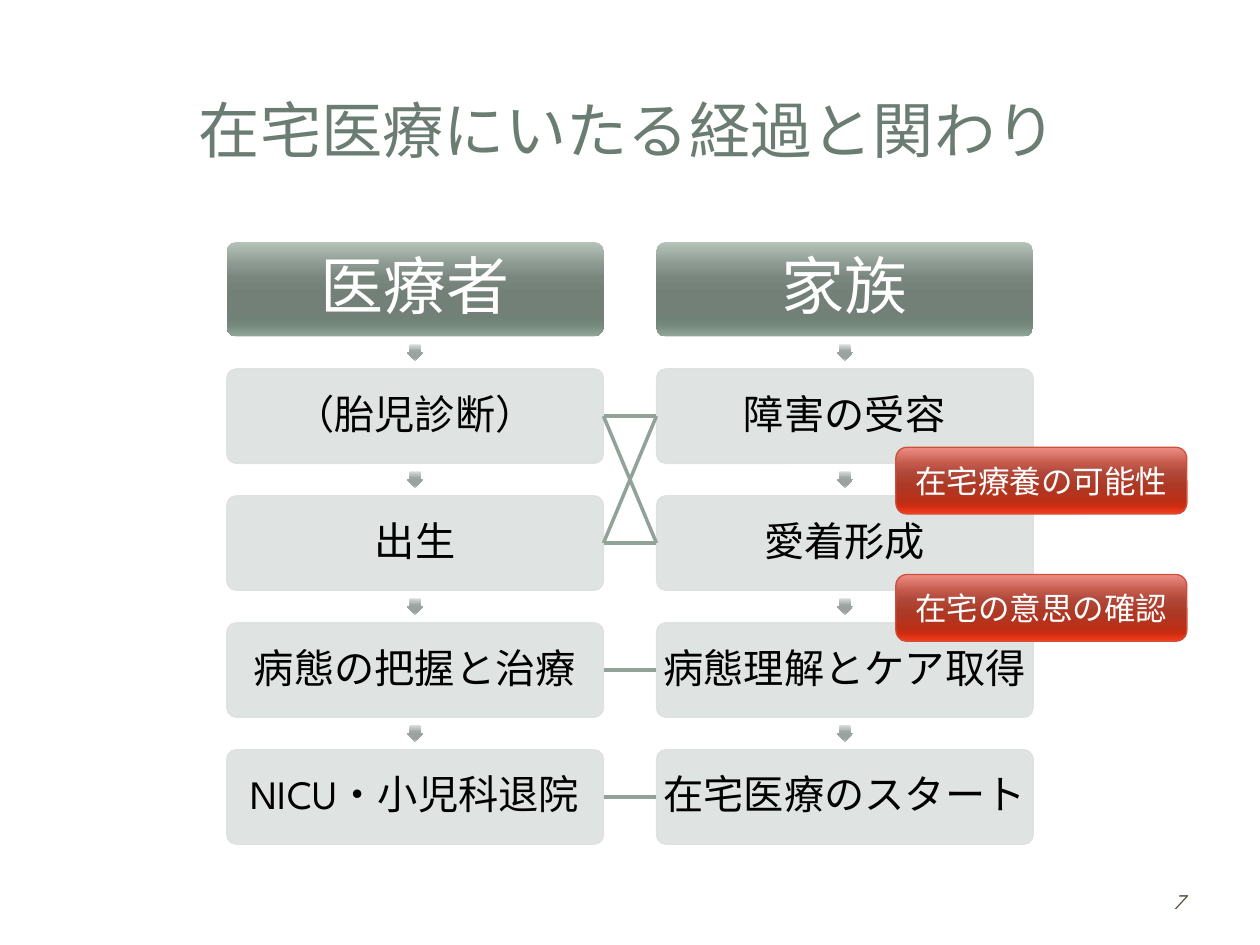
from lxml.etree import SubElement
from pptx import Presentation
from pptx.dml.color import RGBColor
from pptx.enum.shapes import MSO_CONNECTOR, MSO_SHAPE
from pptx.enum.text import MSO_ANCHOR, MSO_AUTO_SIZE, PP_ALIGN
from pptx.oxml.ns import qn
from pptx.util import Inches, Pt

TITLE_FONT = "Vollkorn"
BODY_FONT = "League Spartan"
WHITE = RGBColor(0xFF, 0xFF, 0xFF)
BLACK = RGBColor(0, 0, 0)
TITLE_GREEN = RGBColor(0x6B, 0x7D, 0x72)
STEP_GREY = RGBColor(0xDC, 0xE0, 0xDE)
LINK_GREEN = RGBColor(0x93, 0xA2, 0x99)
NOTE_RED = RGBColor(0xCE, 0x50, 0x3A)
NUMBER_BROWN = RGBColor(0x56, 0x4B, 0x3C)

STOPS = (0, 25, 38, 55, 80, 88, 100)
HEADER_SHADES = [RGBColor.from_string(shade) for shade in
                 "B6C3BB 8B9890 79867E 728078 708176 75887C 91A79A".split()]
ARROW_SHADES = [RGBColor.from_string(shade) for shade in
                "D7DEDA B7BDBA A0A6A2 9CA29E 9AA19D A2AAA5 C7D0CA".split()]
NOTE_SHADES = [RGBColor.from_string(shade) for shade in
               "EF8E85 C1584A B04839 AD3A26 BA2F18 CD2C10 F63D1F".split()]

COLUMNS = [
    ("医療者", ["（胎児診断）", "出生", "病態の把握と治療", "NICU・小児科退院"]),
    ("家族", ["障害の受容", "愛着形成", "病態理解とケア取得", "在宅医療のスタート"]),
]
LINKS = [(0, 0), (0, 1), (1, 0), (1, 1), (2, 2), (3, 3)]
NOTES = ["在宅療養の可能性", "在宅の意思の確認"]
BOX_HEIGHT = Inches(0.75)
ROW_STEP = Inches(1.01)
ARROW_SIZE = Inches(0.13)


def write_text(shape, text, *, size, color, font=BODY_FONT, align=PP_ALIGN.CENTER,
               italic=False, spacing=1.0, inset=None):
    frame = shape.text_frame
    frame.word_wrap = True
    frame.auto_size = MSO_AUTO_SIZE.NONE
    frame.vertical_anchor = MSO_ANCHOR.MIDDLE
    if inset is not None:
        frame.margin_left = frame.margin_right = inset
        frame.margin_top = frame.margin_bottom = inset
    para = frame.paragraphs[0]
    para.alignment = align
    para.line_spacing = spacing
    span = para.add_run()
    span.text = text
    span.font.name = font
    span.font.size = Pt(size)
    span.font.italic = italic
    span.font.color.rgb = color


def fill_gradient(shape, shades):
    """Fill from top to bottom, whatever the rotation of the shape."""
    shape.fill.gradient()
    shape.fill.gradient_angle = 270
    gradient = shape._element.spPr.find(qn("a:gradFill"))
    gradient.set("rotWithShape", "0")
    stops = gradient.find(qn("a:gsLst"))
    for stop in list(stops):
        stops.remove(stop)
    for position, shade in zip(STOPS, shades):
        stop = SubElement(stops, qn("a:gs"), pos=str(position * 1000))
        SubElement(stop, qn("a:srgbClr"), val=str(shade))


def add_plain_shape(page, kind, box):
    shape = page.shapes.add_shape(kind, *box)
    shape.shadow.inherit = False
    shape.line.fill.background()
    return shape


def add_header(page, box, text):
    header = add_plain_shape(page, MSO_SHAPE.ROUNDED_RECTANGLE, box)
    header.adjustments[0] = 0.1
    fill_gradient(header, HEADER_SHADES)
    write_text(header, text, size=36, color=WHITE, spacing=0.9, inset=Inches(0.05))


def add_step(page, box, text):
    step = add_plain_shape(page, MSO_SHAPE.ROUNDED_RECTANGLE, box)
    step.adjustments[0] = 0.1
    step.fill.solid()
    step.fill.fore_color.rgb = STEP_GREY
    step.line.color.rgb = STEP_GREY
    step.line.width = Pt(0.75)
    for color in step._element.spPr.iter(qn("a:srgbClr")):
        SubElement(color, qn("a:alpha"), val="90000")
    write_text(step, text, size=23, color=BLACK, spacing=0.9, inset=Inches(0.03))
    return step


def add_down_arrow(page, center_x, center_y):
    box = (center_x - ARROW_SIZE // 2, center_y - ARROW_SIZE // 2,
           ARROW_SIZE, ARROW_SIZE)
    arrow = add_plain_shape(page, MSO_SHAPE.RIGHT_ARROW, box)
    arrow.adjustments[0] = 0.67
    arrow.rotation = 90
    fill_gradient(arrow, ARROW_SHADES)


def add_column(page, box, heading, labels):
    """Stack a header and its steps, with an arrow in each gap; return the steps."""
    left, top, width, height = box
    row_step = (height - BOX_HEIGHT) // len(labels)
    add_header(page, (left, top, width, BOX_HEIGHT), heading)
    steps = []
    for row, label in enumerate(labels, start=1):
        row_top = top + row * row_step
        add_down_arrow(page, left + width // 2,
                       row_top - (row_step - BOX_HEIGHT) // 2)
        steps.append(add_step(page, (left, row_top, width, BOX_HEIGHT), label))
    return steps


def add_link(page, left_step, right_step):
    link = page.shapes.add_connector(MSO_CONNECTOR.STRAIGHT, 0, 0, 0, 0)
    link.begin_connect(left_step, 3)
    link.end_connect(right_step, 1)
    link.line.color.rgb = LINK_GREEN
    link.line.width = Pt(2)
    SubElement(link._element.spPr, qn("a:effectLst"))


def add_process(page, box):
    left, top, width, height = box
    column_width = Inches(2.99)
    column_step = width - column_width
    medical, family = [
        add_column(page, (left + index * column_step, top, column_width, height),
                   heading, labels)
        for index, (heading, labels) in enumerate(COLUMNS)
    ]
    for start, end in LINKS:
        add_link(page, medical[start], family[end])


def add_notes(page, box):
    left, top, width, height = box
    for index, text in enumerate(NOTES):
        note = add_plain_shape(page, MSO_SHAPE.ROUNDED_RECTANGLE,
                               (left, top + index * ROW_STEP, width, height))
        fill_gradient(note, NOTE_SHADES)
        note.line.color.rgb = NOTE_RED
        note.line.width = Pt(0.75)
        write_text(note, text, size=18, color=WHITE)


def place_title(page, box, text):
    title = page.shapes.title
    title.left, title.top, title.width, title.height = box
    write_text(title, text, size=35, color=TITLE_GREEN, font=TITLE_FONT)


def add_page_number(page, box, number):
    write_text(page.shapes.add_textbox(*box), number, size=12, color=NUMBER_BROWN,
               align=PP_ALIGN.RIGHT, italic=True)


def main():
    deck = Presentation()
    deck.slide_width, deck.slide_height = Inches(10), Inches(7.5)
    page = deck.slides.add_slide(deck.slide_layouts[5])
    place_title(page, (Inches(0.47), Inches(0.45), Inches(9.03), Inches(1.14)),
                "在宅医療にいたる経過と関わり")
    add_process(page, (Inches(1.8), Inches(1.92), Inches(6.4), Inches(4.78)))
    add_notes(page, (Inches(7.11), Inches(3.55), Inches(2.31), Inches(0.53)))
    add_page_number(page, (Inches(7.17), Inches(6.95), Inches(2.33), Inches(0.4)), "7")
    deck.save("out.pptx")


if __name__ == "__main__":
    main()
